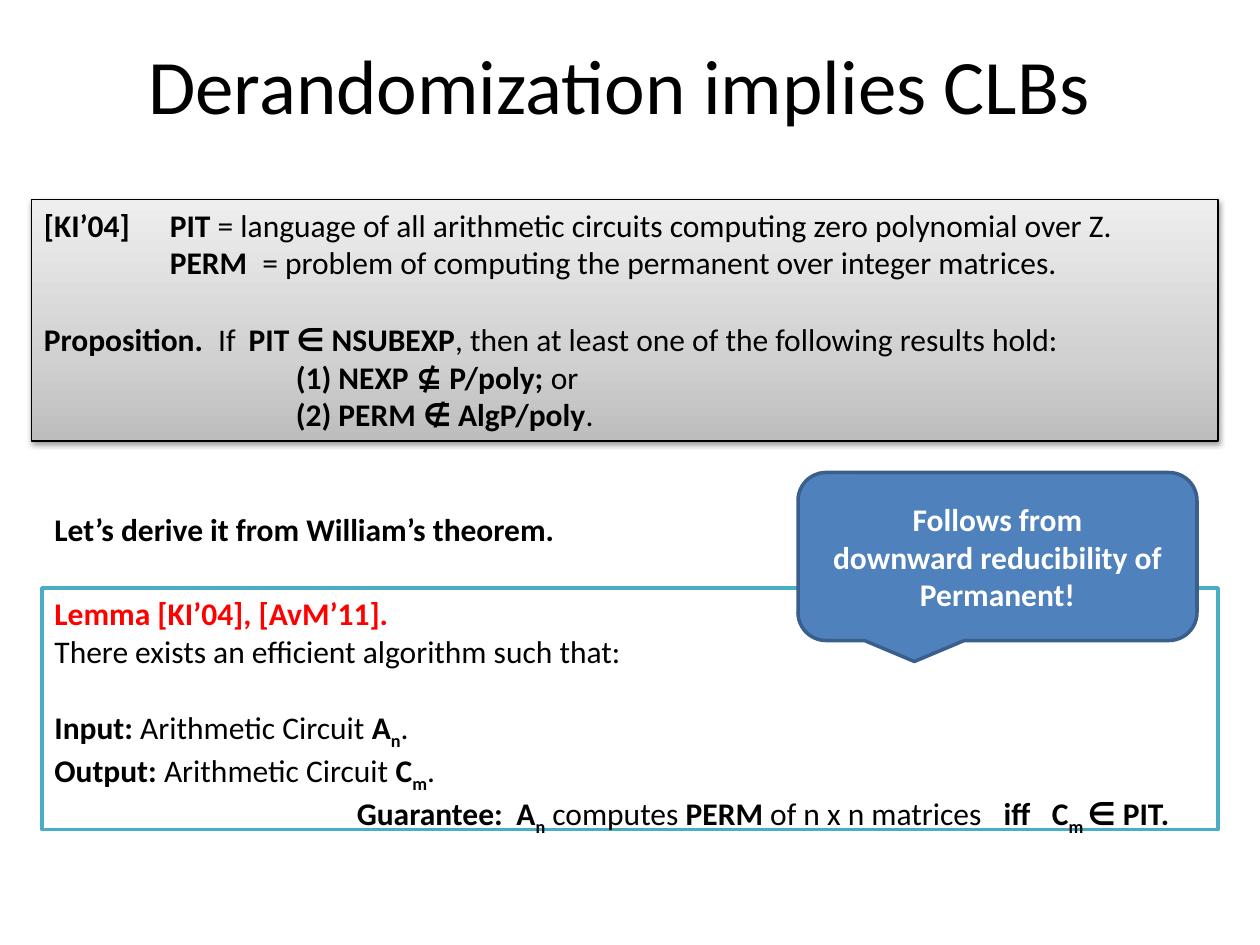
from dataclasses import dataclass

from lxml import etree
from pptx import Presentation
from pptx import util as u
from pptx.dml.color import RGBColor
from pptx.enum import shapes, text
from pptx.oxml import parse_xml
from pptx.oxml.ns import nsdecls, qn

PX = 7620  # EMU per px, 120 px to the inch


@dataclass(frozen=True)
class Theme:
    font: str = "Calibri"
    title: int = 44
    body: int = 18
    gap: int = 22
    black: str = "000000"
    white: str = "FFFFFF"
    red: str = "FF0000"
    teal: str = "4BACC6"
    blue: str = "4F81BD"
    navy: str = "3A5F8C"
    greys: tuple[tuple[int, str], ...] = ((0, "BDBDBD"), (35, "D1D1D1"), (100, "EEEEEE"))


T = Theme()


@dataclass(frozen=True)
class Box:
    x: int
    y: int
    w: int
    h: int

    def emu(self) -> tuple[int, ...]:
        return tuple(n * PX for n in (self.x, self.y, self.w, self.h))


@dataclass(frozen=True)
class Run:
    text: str
    bold: bool = False
    sub: bool = False
    color: str = T.black
    size: int = T.body


@dataclass(frozen=True)
class Line:
    runs: tuple[Run, ...]
    tabs: tuple[int, ...] = ()
    gap: bool = False


def bold(words: str, color: str = T.black) -> Run:
    return Run(words, True, color=color)


def sub(words: str) -> Run:
    return Run(words, True, True)


def rgb(code: str) -> RGBColor:
    return RGBColor.from_string(code)


def write(frame, lines: list[Line], align=text.PP_ALIGN.LEFT,
          anchor=text.MSO_ANCHOR.TOP) -> None:
    frame.word_wrap = True
    frame.auto_size = text.MSO_AUTO_SIZE.NONE
    frame.vertical_anchor = anchor
    for i, line in enumerate(lines):
        para = frame.add_paragraph() if i else frame.paragraphs[0]
        para.alignment = align
        para.space_before = u.Pt(T.gap if line.gap else 0)
        if line.tabs:
            stops = etree.SubElement(para._p.get_or_add_pPr(), qn("a:tabLst"))
            for stop in line.tabs:
                etree.SubElement(stops, qn("a:tab"), pos=str(stop * PX), algn="l")
        for part in line.runs:
            run = para.add_run()
            run.text = part.text
            font = run.font
            font.name, font.size, font.bold = T.font, u.Pt(part.size), part.bold
            font.color.rgb = rgb(part.color)
            if part.sub:
                run._r.get_or_add_rPr().set("baseline", "-25000")


def panel(slide, kind, box: Box, fill: str, edge: str, width: float):
    shape = slide.shapes.add_shape(kind, *box.emu())
    shape.shadow.inherit = False
    shape.fill.solid()
    shape.fill.fore_color.rgb = rgb(fill)
    shape.line.color.rgb = rgb(edge)
    shape.line.width = u.Pt(width)
    return shape


def shade(shape) -> None:
    """Give the shape a grey gradient, dark at the foot, and a soft drop shadow."""
    shape.fill.gradient()
    shape.fill.gradient_angle = 90
    props = shape._element.spPr
    stops = props.find(".//" + qn("a:gsLst"))
    for old in list(stops):
        stops.remove(old)
    for pos, color in T.greys:
        stop = etree.SubElement(stops, qn("a:gs"), pos=str(pos * 1000))
        etree.SubElement(stop, qn("a:srgbClr"), val=color)
    props.find(qn("a:effectLst")).append(parse_xml(
        f'<a:outerShdw {nsdecls("a")} blurRad="40000" dist="20000" dir="5400000" '
        f'rotWithShape="0"><a:srgbClr val="{T.black}"><a:alpha val="38000"/>'
        '</a:srgbClr></a:outerShdw>'))


CLAIM = [
    Line((bold("[KI’04]\tPIT "),
          Run("= language of all arithmetic circuits computing zero polynomial over Z.")),
         (120,)),
    Line((bold("\tPERM"), Run("\t= problem of computing the permanent over integer matrices.")),
         (120, 208)),
    Line((bold("Proposition."), Run("\tIf"), bold("\tPIT ∈ NSUBEXP"),
          Run(", then at least one of the following results hold:")), (166, 195), True),
    Line((bold("\t(1) NEXP ⊈ P/poly; "), Run("or")), (240,)),
    Line((bold("\t(2) PERM ∉ AlgP/poly"), Run(".")), (240,)),
]
LEMMA = [
    Line((bold("Lemma [KI’04], [AvM’11].", T.red),)),
    Line((Run("There exists an efficient algorithm such that:"),)),
    Line((bold("Input:"), Run(" Arithmetic Circuit "), bold("A"), sub("n"), Run(".")), gap=True),
    Line((bold("Output:"), Run(" Arithmetic Circuit "), bold("C"), sub("m"), Run("."))),
    Line((bold("\tGuarantee:\tA"), sub("n"), Run(" computes "), bold("PERM"),
          Run(" of n x n matrices"), bold("\tiff\tC"), sub("m "), bold("∈ PIT.")),
         (288, 440, 904, 950)),
]
HINT = [Line((bold(words, T.white),))
        for words in ("Follows from", "downward reducibility of Permanent!")]


def main() -> None:
    deck = Presentation()
    deck.slide_width, deck.slide_height = 1200 * PX, 900 * PX
    slide = deck.slides.add_slide(deck.slide_layouts[5])
    kinds = shapes.MSO_SHAPE
    mid = (text.PP_ALIGN.CENTER, text.MSO_ANCHOR.MIDDLE)

    title = slide.shapes.title
    title.left, title.top, title.width, title.height = Box(0, 0, 1180, 160).emu()
    write(title.text_frame, [Line((Run("Derandomization implies CLBs", size=T.title),))], *mid)

    claim = panel(slide, kinds.RECTANGLE, Box(30, 190, 1130, 230), T.white, T.black, 0.75)
    shade(claim)
    write(claim.text_frame, CLAIM)

    lead = slide.shapes.add_textbox(*Box(40, 480, 850, 48).emu())
    write(lead.text_frame, [Line((bold("Let’s derive it from William’s theorem."),))])

    lemma = panel(slide, kinds.RECTANGLE, Box(40, 560, 1120, 230), T.white, T.teal, 2)
    write(lemma.text_frame, LEMMA)

    hint = panel(slide, kinds.ROUNDED_RECTANGULAR_CALLOUT, Box(760, 450, 380, 160),
                 T.blue, T.navy, 2)
    write(hint.text_frame, HINT, *mid)

    deck.save("out.pptx")


if __name__ == "__main__":
    main()
